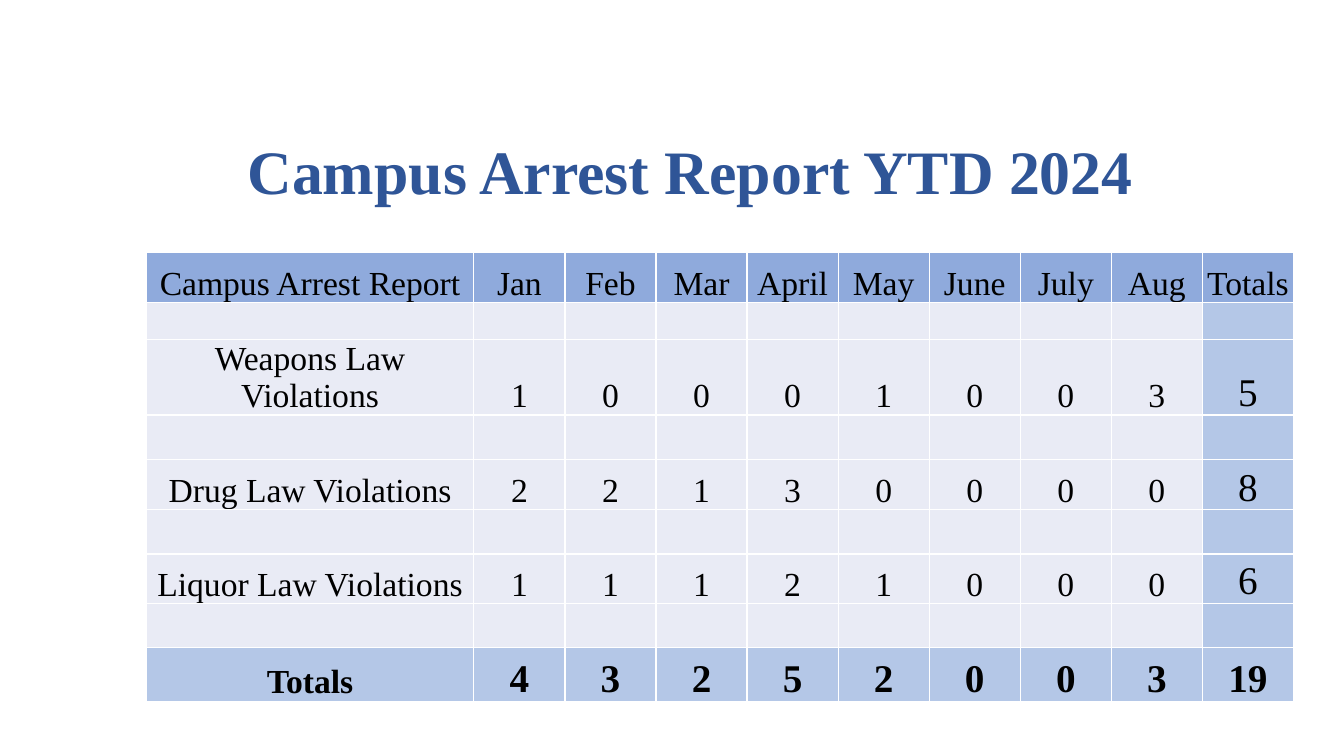
"""Build the campus arrest report slide with its monthly table."""
from lxml.etree import SubElement
from pptx import Presentation
from pptx.dml.color import RGBColor
from pptx.enum.text import MSO_ANCHOR as Anchor, MSO_AUTO_SIZE as Fit, PP_ALIGN as Align
from pptx.oxml.ns import qn
from pptx.util import Inches, Pt

FONT = "Times New Roman"
NAVY = RGBColor(0x2F, 0x55, 0x97)
BLACK = RGBColor(0, 0, 0)
WHITE = RGBColor(0xFF, 0xFF, 0xFF)
HEAD = RGBColor(0x8F, 0xAA, 0xDC)
TOTAL = RGBColor(0xB4, 0xC7, 0xE7)
PALE = RGBColor(0xE9, 0xEB, 0xF5)


def put(frame, text, size=24, bold=False, color=BLACK):
    para = frame.paragraphs[0]
    para.alignment = Align.CENTER
    run = para.add_run()
    run.text = text
    font = run.font
    font.name, font.size, font.bold = FONT, Pt(size), bold
    font.color.rgb = color
    return para


def edge(cell):
    props = cell._tc.get_or_add_tcPr()
    for side in ("lnL", "lnR", "lnT", "lnB"):
        line = SubElement(props, qn(f"a:{side}"), w=str(Pt(1)))
        fill = SubElement(line, qn("a:solidFill"))
        SubElement(fill, qn("a:srgbClr"), val=str(WHITE))


deck = Presentation()
deck.slide_width, deck.slide_height = Inches(13.33), Inches(7.5)
slide = deck.slides.add_slide(deck.slide_layouts[0])
sub = slide.placeholders[1].element
sub.getparent().remove(sub)

title = slide.shapes.title
title.left, title.top = Inches(2.04), Inches(1.21)
title.width, title.height = Inches(9.62), Inches(0.9)
frame = title.text_frame
frame.word_wrap = True
frame.auto_size = Fit.NONE
frame.vertical_anchor = Anchor.BOTTOM
para = put(frame, "Campus Arrest Report YTD 2024", size=44.1, bold=True, color=NAVY)
para.line_spacing = 0.9

months = ["Jan", "Feb", "Mar", "April", "May", "June", "July", "Aug"]
counts = {
    "Weapons Law Violations": [1, 0, 0, 0, 1, 0, 0, 3],
    "Drug Law Violations": [2, 2, 1, 3, 0, 0, 0, 0],
    "Liquor Law Violations": [1, 1, 1, 2, 1, 0, 0, 0],
}
sums = [sum(month) for month in zip(*counts.values())]
rows = [["Campus Arrest Report", *months, "Totals"]]
for name, nums in counts.items():
    rows += [[""] * 10, [name, *nums, sum(nums)]]
rows += [[""] * 10, ["Totals", *sums, sum(sums)]]

heights = [0.5, 0.37, 0.74, 0.44, 0.5, 0.44, 0.49, 0.44, 0.53]
last_row, last_col = len(rows) - 1, len(rows[0]) - 1
width, first = 11.38, 3.25
table = slide.shapes.add_table(
    len(rows), len(rows[0]), Inches(1.45), Inches(2.5), Inches(width), Inches(sum(heights))
).table
table.first_row = table.horz_banding = False
for c, col in enumerate(table.columns):
    col.width = Inches((width - first) / last_col if c else first)

for r, row in enumerate(rows):
    table.rows[r].height = Inches(heights[r])
    for c, value in enumerate(row):
        cell = table.cell(r, c)
        cell.margin_left = cell.margin_right = cell.margin_top = Inches(0.01)
        cell.margin_bottom = 0
        cell.vertical_anchor = Anchor.BOTTOM
        edge(cell)
        total = r == last_row or c == last_col
        cell.fill.solid()
        cell.fill.fore_color.rgb = HEAD if r == 0 else TOTAL if total else PALE
        if value != "":
            large = total and r > 0 and c > 0
            put(cell.text_frame, str(value), size=28 if large else 24, bold=r == last_row)

deck.save("out.pptx")
